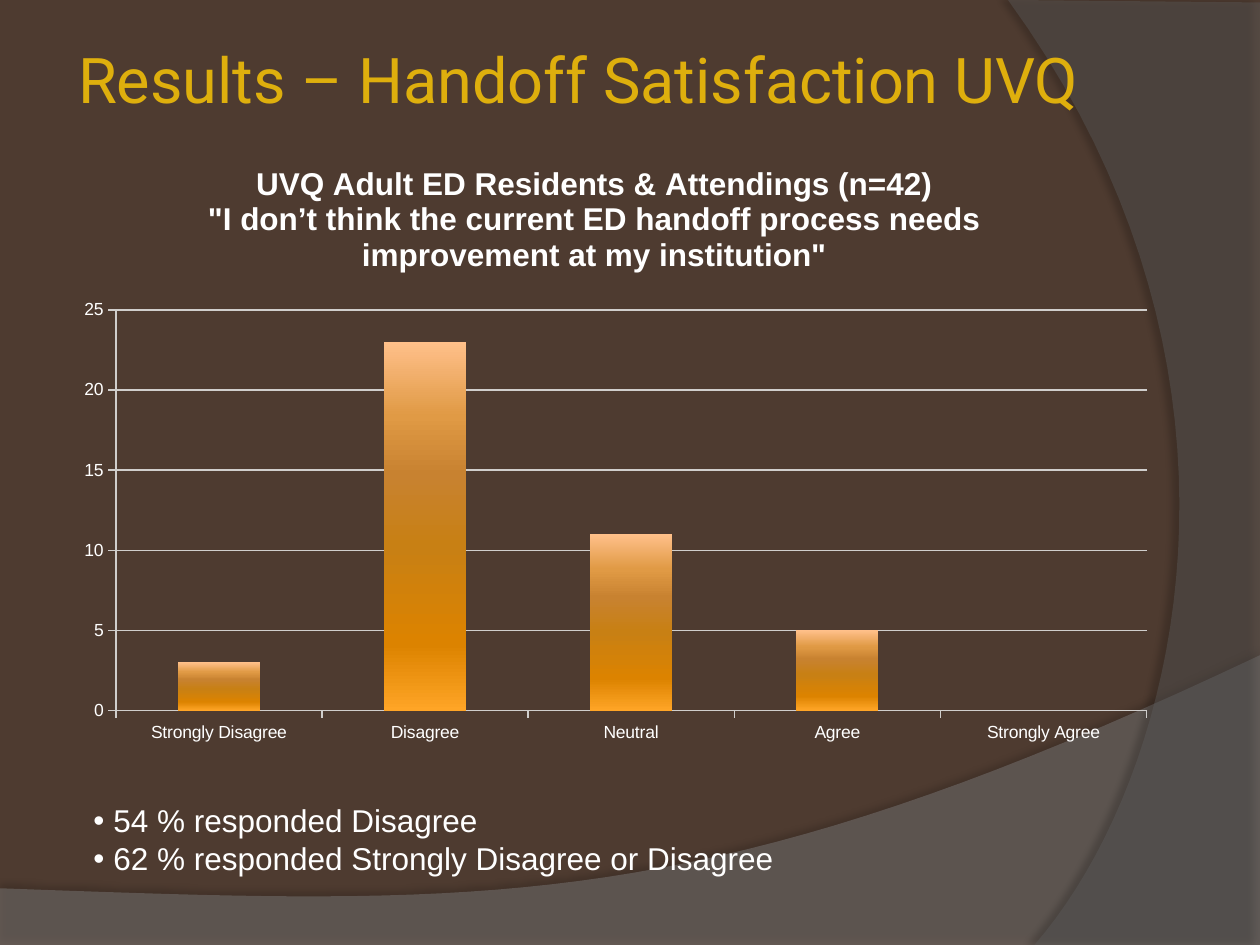
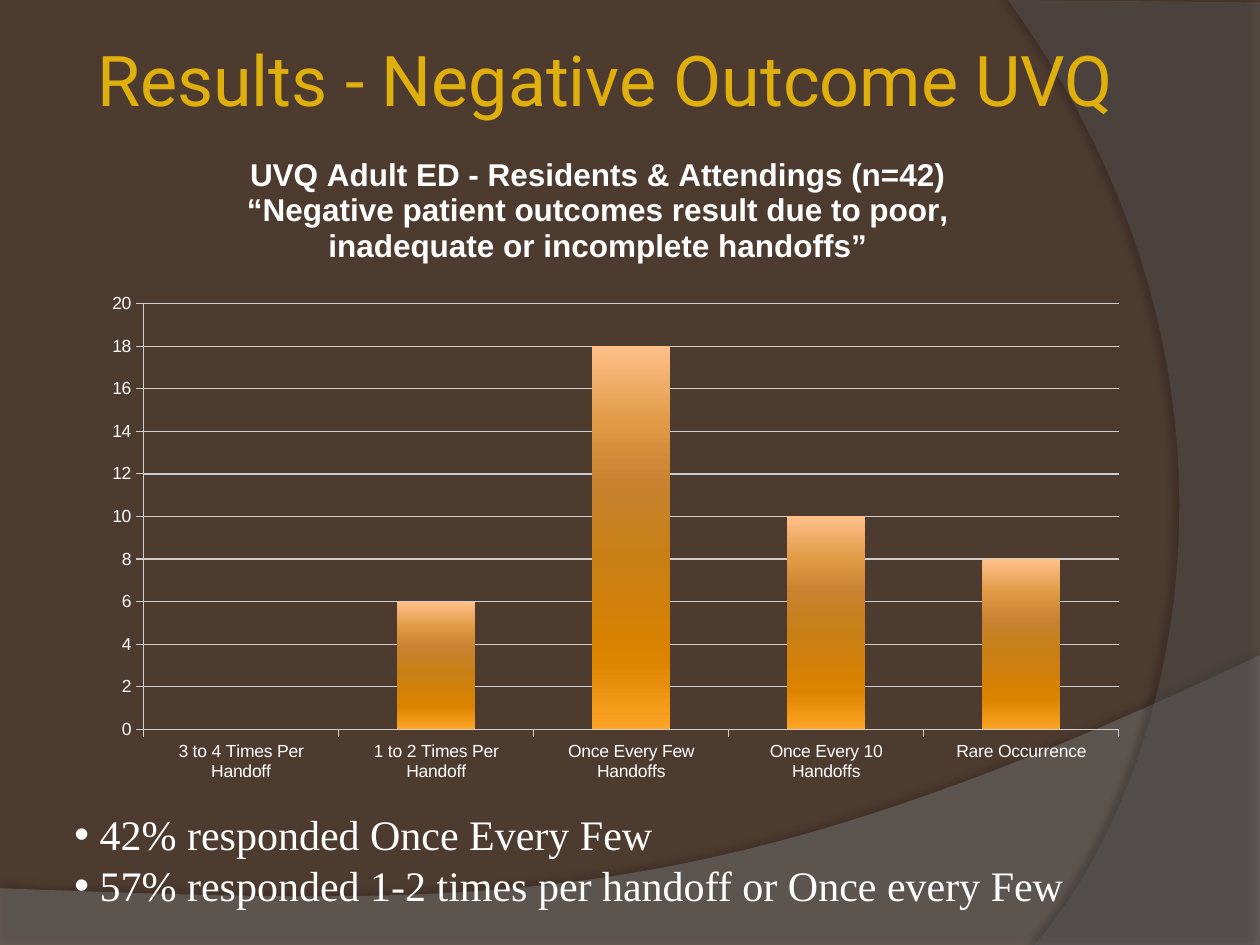
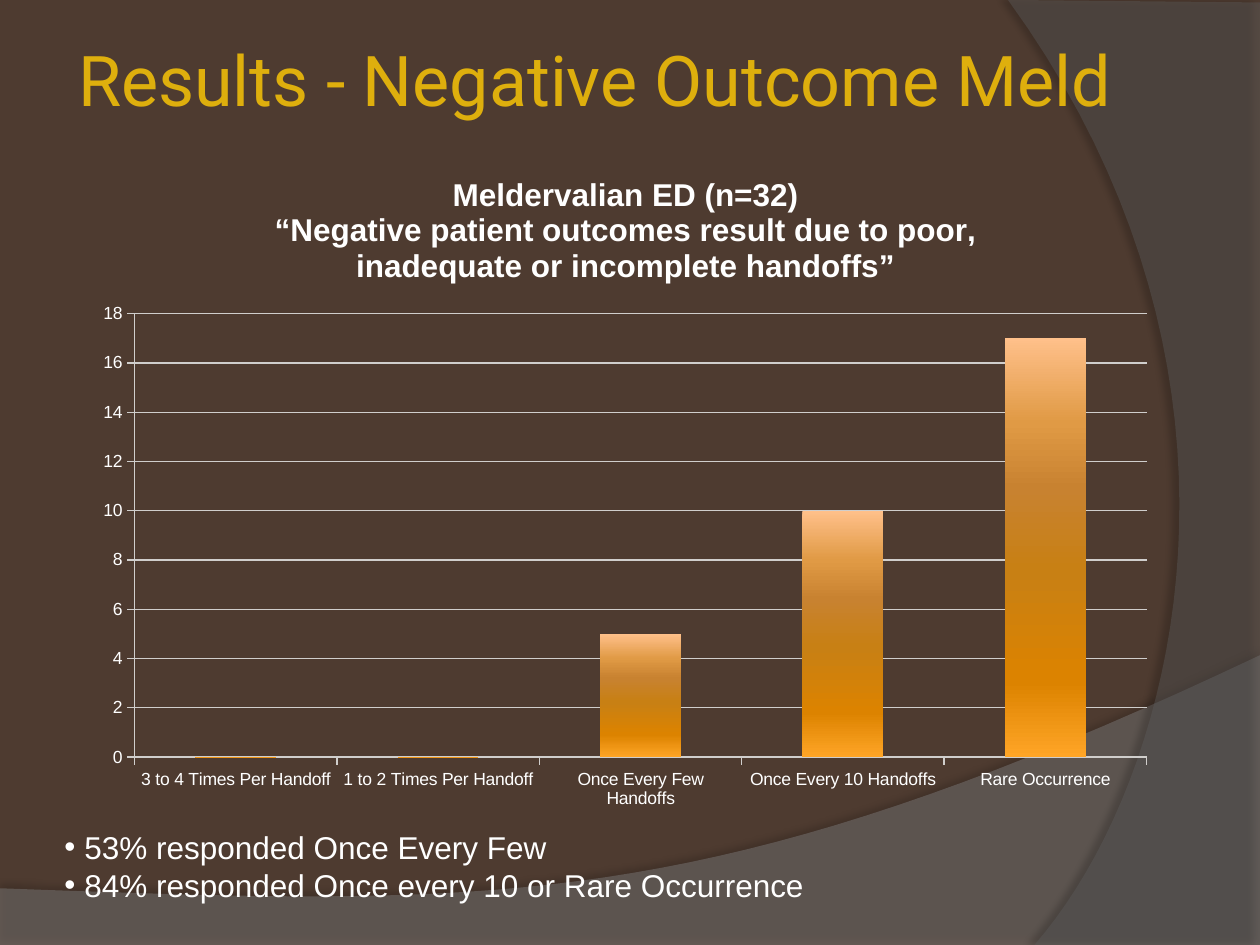
from dataclasses import dataclass

from lxml import etree
from pptx import Presentation
from pptx.chart.data import CategoryChartData
from pptx.dml.color import RGBColor
from pptx.enum.chart import XL_CHART_TYPE, XL_TICK_MARK
from pptx.enum.text import MSO_ANCHOR, MSO_AUTO_SIZE, PP_ALIGN
from pptx.oxml import parse_xml
from pptx.oxml.ns import nsdecls, qn
from pptx.util import Inches, Pt

STACKED = XL_CHART_TYPE.COLUMN_STACKED
TICK_OUTSIDE = XL_TICK_MARK.OUTSIDE
LEFT = PP_ALIGN.LEFT
MIDDLE, TOP = MSO_ANCHOR.MIDDLE, MSO_ANCHOR.TOP
NO_AUTOFIT = MSO_AUTO_SIZE.NONE


@dataclass(frozen=True)
class Theme:
    background: RGBColor = RGBColor(0x4E, 0x3B, 0x30)
    title: RGBColor = RGBColor(0xDE, 0xAF, 0x0D)
    text: RGBColor = RGBColor(0xFF, 0xFF, 0xFF)
    rule: RGBColor = RGBColor(0xD0, 0xCE, 0xCC)
    bar_stops: tuple = ((0, "FFC08A"), (20, "E09A45"), (36, "C88230"),
                        (55, "C88014"), (82, "DC8300"), (100, "FFA526"))
    title_font: str = "Roboto"
    text_font: str = "Arial"
    chart_title_size: int = 18
    axis_size: int = 10


theme = Theme()

waves = [
    {"color": "7F7F7F", "alpha": 45, "shadow": (35, 3.5, 270),
     "corners": [(0, 7.05), (0, 7.51), (10, 7.51), (10, 5.2)],
     "curve": [(10, 5.2), (5.59, 7.29), (3.91, 7.19), (0, 7.05)]},
    {"color": "5E5E5E", "alpha": 40, "shadow": (45, 4, 180),
     "corners": [(10, 0.02), (10, 7.5), (8.21, 7.5)],
     "curve": [(8.21, 7.5), (9.35, 6.19), (10.18, 3), (8, 0)]},
]

frequencies = ["3 to 4 Times Per Handoff", "1 to 2 Times Per Handoff",
               "Once Every Few Handoffs", "Once Every 10 Handoffs", "Rare Occurrence"]
agreement = ["Strongly Disagree", "Disagree", "Neutral", "Agree", "Strongly Agree"]
outcome_question = ("“Negative patient outcomes result due to poor, "
                    "inadequate or incomplete handoffs”")

results = [
    {"title": "Results – Handoff Satisfaction UVQ", "title_left": 0.57, "title_size": 36,
     "chart_box": (0.5, 1.2, 8.78, 4.8), "plot_box": (0.92, 2.46, 8.18, 3.18),
     "heading_at": (1.62, 1.27),
     "heading": ["UVQ Adult ED Residents & Attendings (n=42)",
                 "\"I don’t think the current ED handoff process needs "
                 "improvement at my institution\""],
     "categories": agreement, "values": [3, 23, 11, 5, 0], "maximum": 25, "step": 5,
     "list_box": (0.65, 6.32, 8.55, 0.7), "list_font": theme.text_font,
     "list_size": 18, "indent": 0.16,
     "findings": ["54 % responded Disagree",
                  "62 % responded Strongly Disagree or Disagree"]},
    {"title": "Results - Negative Outcome UVQ", "title_left": 0.72, "title_size": 40,
     "chart_box": (0.72, 1.12, 8.32, 5.17), "plot_box": (1.14, 2.41, 7.74, 3.38),
     "heading_at": (1.93, 1.2),
     "heading": ["UVQ Adult ED - Residents & Attendings (n=42)", outcome_question],
     "categories": frequencies, "values": [0, 6, 18, 10, 8], "maximum": 20, "step": 2,
     "list_box": (0.5, 6.38, 8.1, 0.9), "list_font": "Times New Roman",
     "list_size": 24, "indent": 0.2,
     "findings": ["42% responded Once Every Few",
                  "57% responded 1-2 times per handoff or Once every Few"]},
    {"title": "Results - Negative Outcome Meld", "title_left": 0.57, "title_size": 40,
     "chart_box": (0.65, 1.2, 8.62, 5.33), "plot_box": (1.07, 2.49, 8.03, 3.52),
     "heading_at": (2.15, 1.36),
     "heading": ["Meldervalian ED (n=32)", outcome_question],
     "categories": frequencies, "values": [0, 0, 5, 10, 17], "maximum": 18, "step": 2,
     "list_box": (0.42, 6.53, 6.1, 0.7), "list_font": theme.text_font,
     "list_size": 18, "indent": 0.16,
     "findings": ["53% responded Once Every Few",
                  "84% responded Once every 10 or Rare Occurrence"]},
]


def set_chart_layout(parent, index, chart_box, box):
    for existing in parent.findall(qn("c:layout")):
        parent.remove(existing)
    left, top, width, height = chart_box
    fractions = {"x": (box[0] - left) / width, "y": (box[1] - top) / height}
    target = ""
    if len(box) == 4:
        fractions.update(w=box[2] / width, h=box[3] / height)
        target = '<c:layoutTarget val="inner"/>'
    modes = "".join(f'<c:{key}Mode val="edge"/>' for key in "xy")
    sizes = "".join(f'<c:{key} val="{value:.4f}"/>' for key, value in fractions.items())
    parent.insert(index, parse_xml(
        f'<c:layout {nsdecls("c")}><c:manualLayout>{target}{modes}{sizes}'
        '</c:manualLayout></c:layout>'))


def move_to(shape, box):
    shape.left, shape.top, shape.width, shape.height = [Inches(length) for length in box]


presentation = Presentation()
presentation.slide_width = Inches(10)
presentation.slide_height = Inches(7.5)
master = presentation.slide_master
master.background.fill.solid()
master.background.fill.fore_color.rgb = theme.background
layout = presentation.slide_layouts[1]
slides = [presentation.slides.add_slide(layout) for result in results]

for position, wave in enumerate(waves):
    points = list(wave["corners"])
    start, first, second, end = wave["curve"]
    for count in range(1, 41):
        t = count / 40
        points.append(tuple(
            (1 - t) ** 3 * a + 3 * (1 - t) ** 2 * t * b + 3 * (1 - t) * t ** 2 * c + t ** 3 * d
            for a, b, c, d in zip(start, first, second, end)))
    points = [(Inches(x), Inches(y)) for x, y in points]
    builder = slides[0].shapes.build_freeform(*points[0])
    builder.add_line_segments(points[1:], close=True)
    shape = builder.convert_to_shape()
    shape.fill.solid()
    shape.fill.fore_color.rgb = RGBColor.from_string(wave["color"])
    shape.line.fill.background()
    shape.shadow.inherit = False
    color = shape._element.spPr.find(".//" + qn("a:srgbClr"))
    etree.SubElement(color, qn("a:alpha"), val=str(wave["alpha"] * 1000))
    opacity, distance, direction = wave["shadow"]
    shape._element.spPr.find(qn("a:effectLst")).append(parse_xml(
        f'<a:outerShdw {nsdecls("a")} blurRad="{Pt(4)}" dist="{Pt(distance)}" '
        f'dir="{direction * 60000}" algn="ctr" rotWithShape="0"><a:srgbClr val="000000">'
        f'<a:alpha val="{opacity * 1000}"/></a:srgbClr></a:outerShdw>'))
    master.shapes._spTree.insert(2 + position, shape._element)

for slide, result in zip(slides, results):
    title = slide.shapes.title
    move_to(title, (result["title_left"], 0, 8.5, 1.25))
    title.text_frame.text = result["title"]
    title.text_frame.auto_size = NO_AUTOFIT
    title.text_frame.vertical_anchor = MIDDLE
    title.text_frame.margin_left = title.text_frame.margin_right = Inches(0.05)
    title.text_frame.margin_top = title.text_frame.margin_bottom = Inches(0.04)
    paragraph = title.text_frame.paragraphs[0]
    paragraph.alignment = LEFT
    paragraph.font.name = theme.title_font
    paragraph.font.size = Pt(result["title_size"])
    paragraph.font.color.rgb = theme.title

    chart_data = CategoryChartData()
    chart_data.categories = result["categories"]
    chart_data.add_series("Series 1", result["values"])
    chart_box = result["chart_box"]
    chart = slide.shapes.add_chart(
        STACKED, *[Inches(length) for length in chart_box], chart_data).chart
    chart.has_legend = False
    chart.font.name = theme.text_font
    chart.font.size = Pt(theme.axis_size)
    chart.font.color.rgb = theme.text

    heading = chart.chart_title.text_frame
    heading.text = "\n".join(result["heading"])
    for paragraph in heading.paragraphs:
        paragraph.font.name = theme.text_font
        paragraph.font.size = Pt(theme.chart_title_size)
        paragraph.font.bold = True
        paragraph.font.color.rgb = theme.text
    chart.chart_title.include_in_layout = False
    set_chart_layout(chart.chart_title._element, 1, chart_box, result["heading_at"])
    set_chart_layout(chart._chartSpace.chart.plotArea, 0, chart_box, result["plot_box"])

    plot = chart.plots[0]
    plot.gap_width = 150
    plot.overlap = 100
    plot.vary_by_categories = False
    stops = "".join(f'<a:gs pos="{place * 1000}"><a:srgbClr val="{color}"/></a:gs>'
                    for place, color in theme.bar_stops)
    plot.series[0]._element.get_or_add_spPr().insert(0, parse_xml(
        f'<a:gradFill {nsdecls("a")} rotWithShape="1"><a:gsLst>{stops}</a:gsLst>'
        '<a:lin ang="5400000" scaled="0"/></a:gradFill>'))

    for axis in (chart.category_axis, chart.value_axis):
        axis.major_tick_mark = TICK_OUTSIDE
        axis.format.line.color.rgb = theme.rule
        axis.format.line.width = Pt(0.75)
    value_axis = chart.value_axis
    value_axis.minimum_scale = 0
    value_axis.maximum_scale = result["maximum"]
    value_axis.major_unit = result["step"]
    value_axis.major_gridlines.format.line.color.rgb = theme.rule
    value_axis.major_gridlines.format.line.width = Pt(0.75)

    findings = slide.placeholders[1]
    move_to(findings, result["list_box"])
    findings.text_frame.text = "\n".join(result["findings"])
    findings.text_frame.auto_size = NO_AUTOFIT
    findings.text_frame.word_wrap = True
    findings.text_frame.vertical_anchor = TOP
    findings.text_frame.margin_left = findings.text_frame.margin_right = Inches(0.09)
    findings.text_frame.margin_top = findings.text_frame.margin_bottom = Inches(0.04)
    for paragraph in findings.text_frame.paragraphs:
        paragraph.alignment = LEFT
        paragraph.space_before = Pt(0)
        paragraph.line_spacing = 1.0
        paragraph.font.name = result["list_font"]
        paragraph.font.size = Pt(result["list_size"])
        paragraph.font.color.rgb = theme.text
        properties = paragraph._p.get_or_add_pPr()
        properties.set("marL", str(Inches(result["indent"])))
        properties.set("indent", str(-Inches(result["indent"])))
        bullet_font = parse_xml(f'<a:buFont {nsdecls("a")} typeface="Arial"/>')
        bullet = parse_xml(f'<a:buChar {nsdecls("a")} char="•"/>')
        default_font = properties.find(qn("a:defRPr"))
        default_font.addprevious(bullet_font)
        default_font.addprevious(bullet)

presentation.save("out.pptx")
